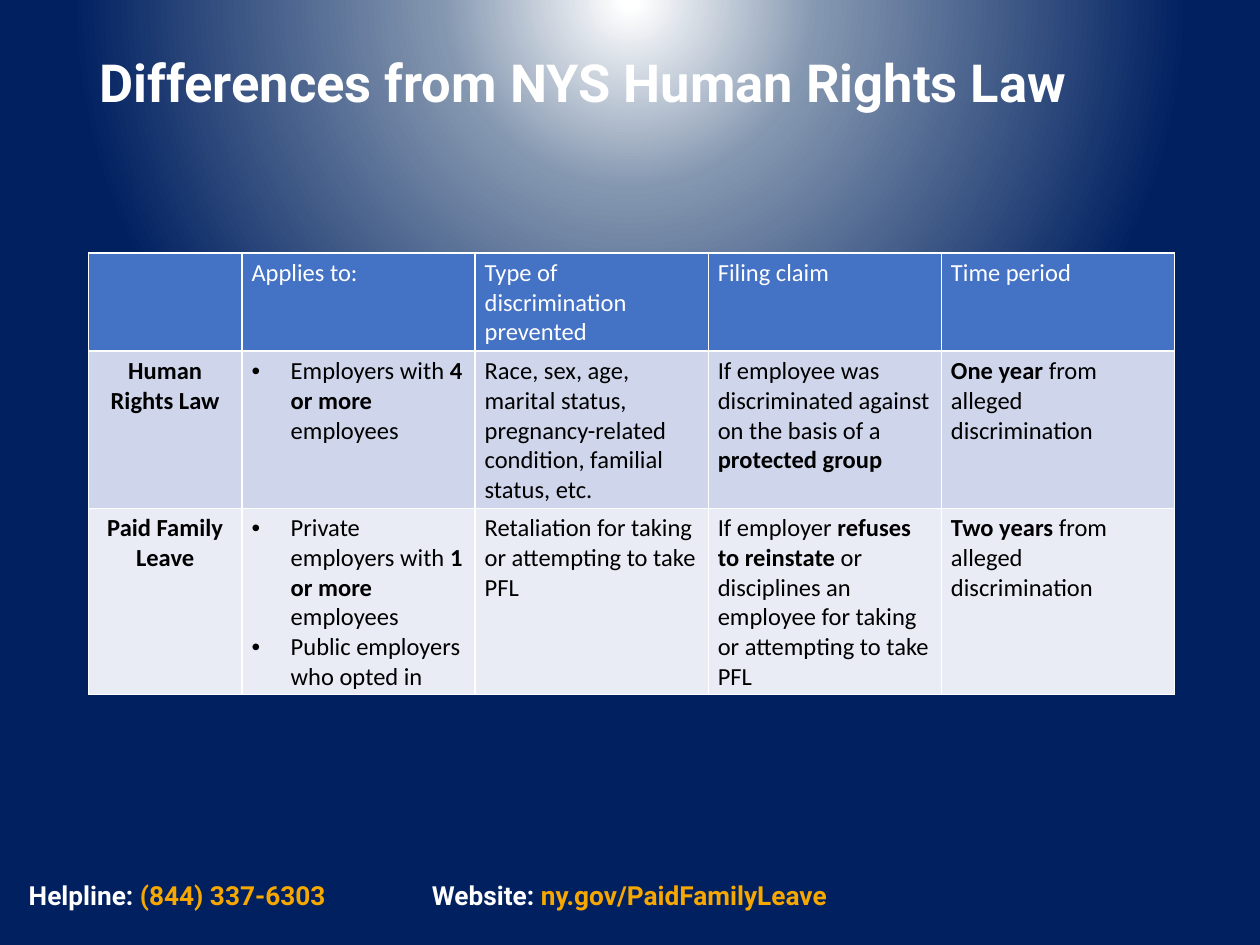
from lxml import etree
from pptx import Presentation
from pptx import util as u
from pptx.dml.color import RGBColor
from pptx.enum import text
from pptx.oxml import parse_xml
from pptx.oxml.ns import nsdecls, qn

WHITE, BLACK, GOLD = "FFFFFF", "000000", "F7A800"
HEADER_FILL, BAND_FILLS = "4472C4", ("CFD5EA", "E9EBF5")
BACKGROUND_STOPS = ((1, "FFFFFF"), (24, "8497B0"), (71, "002060"))

HEADINGS = ["", "Applies to:", "Type of discrimination prevented", "Filing claim", "Time period"]
# ** marks bold; a list becomes bullets
LAWS = [
    ["**Human Rights Law**",
     ["Employers with **4 or more** employees"],
     "Race, sex, age, marital status, pregnancy-related condition, familial status, etc.",
     "If employee was discriminated against on the basis of a **protected group**",
     "**One year **from alleged discrimination"],
    ["**Paid Family Leave**",
     ["Private employers with **1 or more **employees", "Public employers who opted in"],
     "Retaliation for taking or attempting to take PFL",
     "If employer **refuses to reinstate** or disciplines an employee for taking "
     "or attempting to take PFL",
     "**Two years** from alleged discrimination"],
]


def rgb(hex_color):
    return RGBColor.from_string(hex_color)


def set_font(font, name, size, color, bold):
    font.name, font.size, font.bold = name, u.Pt(size), bold
    font.color.rgb = rgb(color)


def paint_background(slide):
    """Radial gradient whose centre lies above the slide."""
    slide.background.fill.gradient()
    stops = "".join(f'<a:gs pos="{pos * 1000}"><a:srgbClr val="{color}"/></a:gs>'
                    for pos, color in BACKGROUND_STOPS)
    gradient = parse_xml(
        f'<a:gradFill {nsdecls("a")} rotWithShape="1"><a:gsLst>{stops}</a:gsLst>'
        '<a:path path="circle"><a:fillToRect l="50000" t="-80000" r="50000" b="180000"/>'
        '</a:path></a:gradFill>')
    default = slide.element.find(".//" + qn("a:gradFill"))
    default.getparent().replace(default, gradient)


def add_title(slide, wording):
    title = slide.shapes.title
    title.left, title.top, title.width, title.height = map(u.Cm, (1.75, 1.02, 21.89, 2.34))
    frame = title.text_frame
    frame.text = wording
    frame.auto_size = text.MSO_AUTO_SIZE.NONE
    frame.vertical_anchor = text.MSO_ANCHOR.TOP
    heading = frame.paragraphs[0]
    heading.alignment = text.PP_ALIGN.LEFT
    heading.line_spacing = 0.9
    set_font(heading.font, "Roboto", 30, WHITE, True)


def add_contact(slide, left, width, label, detail, alignment):
    frame = slide.shapes.add_textbox(u.Cm(left), u.Cm(17.6), u.Cm(width), u.Cm(0.9)).text_frame
    frame.word_wrap = True
    contact = frame.paragraphs[0]
    contact.alignment = alignment
    for wording, color in ((label, WHITE), (detail, GOLD)):
        run = contact.add_run()
        run.text = wording
        set_font(run.font, "Roboto", 15, color, True)


def add_bullet(paragraph):
    properties = paragraph._p.get_or_add_pPr()
    properties.set("marL", str(u.Cm(0.79)))
    properties.set("indent", str(-u.Cm(0.79)))
    etree.SubElement(properties, qn("a:buFont"), typeface="Arial")
    etree.SubElement(properties, qn("a:buChar"), char="•")


def write_marked(paragraph, wording, color):
    set_font(paragraph.font, "Calibri", 14, color, False)
    for index, part in enumerate(wording.split("**")):
        if part:
            run = paragraph.add_run()
            run.text = part
            set_font(run.font, "Calibri", 14, color, index % 2 == 1)


def outline_cell(cell):
    properties = cell._tc.get_or_add_tcPr()
    for position, side in enumerate(("lnL", "lnR", "lnT", "lnB")):
        properties.insert(position, parse_xml(
            f'<a:{side} {nsdecls("a")} w="{u.Pt(1)}"><a:solidFill>'
            f'<a:srgbClr val="{WHITE}"/></a:solidFill></a:{side}>'))


def fill_cell(cell, content, fill, color, alignment):
    cell.fill.solid()
    cell.fill.fore_color.rgb = rgb(fill)
    outline_cell(cell)
    cell.margin_left = cell.margin_right = u.Cm(0.19)
    cell.margin_top = cell.margin_bottom = u.Cm(0.1)
    bulleted = isinstance(content, list)
    frame = cell.text_frame
    for index, wording in enumerate(content if bulleted else [content]):
        paragraph = frame.add_paragraph() if index else frame.paragraphs[0]
        paragraph.alignment = alignment
        if bulleted:
            add_bullet(paragraph)
        write_marked(paragraph, wording, color)


def add_comparison(slide):
    rows = [HEADINGS] + LAWS
    table = slide.shapes.add_table(len(rows), len(HEADINGS), u.Cm(1.78), u.Cm(5.1),
                                   u.Cm(21.9), u.Cm(5.88)).table
    table.first_row = table.horz_banding = False
    for index, column in enumerate(table.columns):
        column.width = u.Cm(4.7 if index else 3.1)
    for r, contents in enumerate(rows):
        fill = BAND_FILLS[r - 1] if r else HEADER_FILL
        for c, content in enumerate(contents):
            alignment = text.PP_ALIGN.LEFT if c else text.PP_ALIGN.CENTER
            fill_cell(table.cell(r, c), content, fill, BLACK if r else WHITE, alignment)


def main():
    deck = Presentation()
    deck.slide_width, deck.slide_height = u.Cm(25.4), u.Cm(19.05)
    slide = deck.slides.add_slide(deck.slide_layouts[5])
    paint_background(slide)
    add_contact(slide, 0.33, 8.84, "Helpline: ", "(844) 337-6303", text.PP_ALIGN.LEFT)
    add_contact(slide, 7.98, 9.42, "Website: ", "ny.gov/PaidFamilyLeave", text.PP_ALIGN.CENTER)
    add_title(slide, "Differences from NYS Human Rights Law")
    add_comparison(slide)
    deck.save("out.pptx")


if __name__ == "__main__":
    main()
